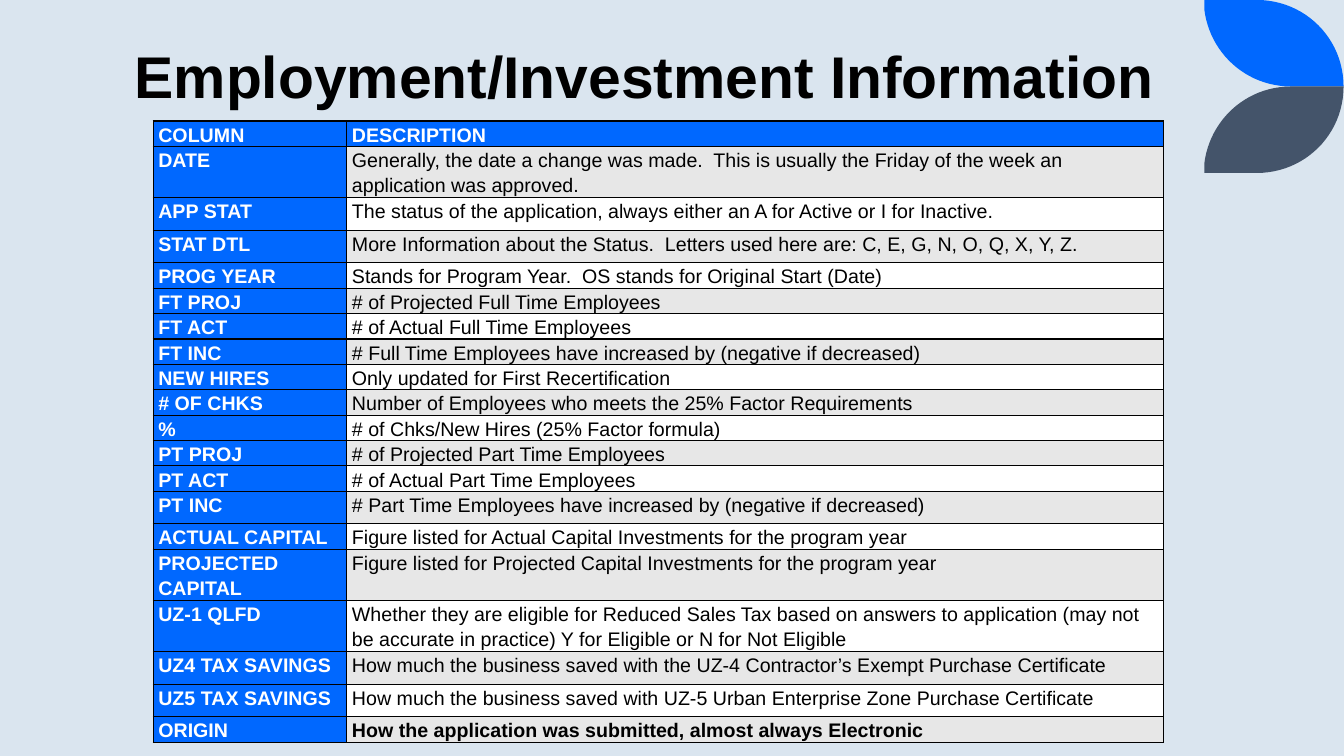
from lxml.etree import SubElement
from pptx import Presentation
from pptx.dml.color import RGBColor
from pptx.enum.text import MSO_ANCHOR, MSO_AUTO_SIZE, PP_ALIGN
from pptx.oxml.ns import qn
from pptx.util import Cm, Pt

BLUE, SLATE, GREY, WHITE, BLACK = "0068FF", "44546A", "E7E7E7", "FFFFFF", "000000"


def paint(fill, tone):
    fill.solid()
    fill.fore_color.rgb = RGBColor.from_string(tone)


def style(para, font, **form):
    for key, val in form.items():
        setattr(para, key, val)
    for key, val in font.items():
        if key == "tone":
            paint(para.font.fill, val)
        else:
            setattr(para.font, key, val)


deck = Presentation()
deck.slide_width, deck.slide_height = Cm(33.87), Cm(19.05)
slide = deck.slides.add_slide(deck.slide_layouts[5])
paint(slide.background.fill, "DAE5EF")

upper = [(31.67, 0), (32.89, 0), (33.86, 0.97), (33.86, 2.18)]
lower = [(32.54, 2.18), (31.39, 2.18), (30.48, 1.32), (30.35, 0.23)]
edge = [(30.35, 0)]
for curve in (upper, lower):
    for step in range(25):
        t = step / 24
        parts = ((1 - t) ** 3, 3 * t * (1 - t) ** 2, 3 * t * t * (1 - t), t ** 3)
        edge.append(tuple(sum(w * p[axis] for w, p in zip(parts, curve)) for axis in (0, 1)))

for tone, base, sign in ((BLUE, 0, 1), (SLATE, 4.36, -1)):
    dots = [(Cm(x), Cm(base + sign * y)) for x, y in edge]
    pen = slide.shapes.build_freeform(*dots[0])
    pen.add_line_segments(dots[1:], close=True)
    leaf = pen.convert_to_shape()
    leaf.shadow.inherit = False
    leaf.line.fill.background()
    paint(leaf.fill, tone)

title = slide.shapes.title
place = {"left": Cm(3.14), "top": Cm(0.69), "width": Cm(26.92), "height": Cm(2.21)}
for key, val in place.items():
    setattr(title, key, val)
frame = title.text_frame
frame.text = "Employment/Investment Information"
frame.word_wrap = True
frame.auto_size = MSO_AUTO_SIZE.NONE
frame.vertical_anchor = MSO_ANCHOR.BOTTOM
style(frame.paragraphs[0], {"name": "Arial", "size": Pt(42), "bold": True, "tone": BLACK},
      alignment=PP_ALIGN.LEFT, line_spacing=0.8)

LOW, MID, TALL = 0.64, 0.82, 1.29
rows = [
    ("COLUMN", "DESCRIPTION", LOW),
    ("DATE", "Generally, the date a change was made.  This is usually the Friday of the week an application was approved.", TALL),
    ("APP STAT", "The status of the application, always either an A for Active or I for Inactive.", MID),
    ("STAT DTL", "More Information about the Status.  Letters used here are: C, E, G, N, O, Q, X, Y, Z.", MID),
    ("PROG YEAR", "Stands for Program Year.  OS stands for Original Start (Date)", LOW),
    ("FT PROJ", "# of Projected Full Time Employees", LOW),
    ("FT ACT", "# of Actual Full Time Employees", LOW),
    ("FT INC", "# Full Time Employees have increased by (negative if decreased)", LOW),
    ("NEW HIRES", "Only updated for First Recertification", LOW),
    ("# OF CHKS", "Number of Employees who meets the 25% Factor Requirements", LOW),
    ("%", "# of Chks/New Hires (25% Factor formula)", LOW),
    ("PT PROJ", "# of Projected Part Time Employees", LOW),
    ("PT ACT", "# of Actual Part Time Employees", LOW),
    ("PT INC", "# Part Time Employees have increased by (negative if decreased)", MID),
    ("ACTUAL CAPITAL", "Figure listed for Actual Capital Investments for the program year", LOW),
    ("PROJECTED CAPITAL", "Figure listed for Projected Capital Investments for the program year", TALL),
    ("UZ-1 QLFD", "Whether they are eligible for Reduced Sales Tax based on answers to application (may not be accurate in practice) Y for Eligible or N for Not Eligible", TALL),
    ("UZ4 TAX SAVINGS", "How much the business saved with the UZ-4 Contractor’s Exempt Purchase Certificate", MID),
    ("UZ5 TAX SAVINGS", "How much the business saved with UZ-5 Urban Enterprise Zone Purchase Certificate", MID),
    ("ORIGIN", "How the application was submitted, almost always Electronic", LOW),
]
high = sum(row[2] for row in rows)
grid = slide.shapes.add_table(len(rows), 2, Cm(3.86), Cm(3.05), Cm(25.46), Cm(high)).table
grid.horz_banding = False
for col, wide in zip(grid.columns, (4.88, 20.58)):
    col.width = Cm(wide)

inset = {"margin_left": Cm(0.13), "margin_right": Cm(0.13), "margin_top": 0, "margin_bottom": 0}
for r, (*words, tall) in enumerate(rows):
    grid.rows[r].height = Cm(tall)
    for c, text in enumerate(words):
        cell = grid.cell(r, c)
        cell.text = text
        for key, val in inset.items():
            setattr(cell, key, val)
        head = r == 0 or c == 0
        bold = head or r == len(rows) - 1
        style(cell.text_frame.paragraphs[0],
              {"name": "Arial", "size": Pt(14), "bold": bold, "tone": WHITE if head else BLACK},
              line_spacing=1.15, space_after=Pt(8))
        props = cell._tc.get_or_add_tcPr()
        for side in ("a:lnL", "a:lnR", "a:lnT", "a:lnB"):
            line = SubElement(props, qn(side), w=str(Pt(1)))
            ink = SubElement(line, qn("a:solidFill"))
            SubElement(ink, qn("a:srgbClr"), val=BLACK)
        paint(cell.fill, BLUE if head else GREY if r % 2 else WHITE)

deck.save("out.pptx")
